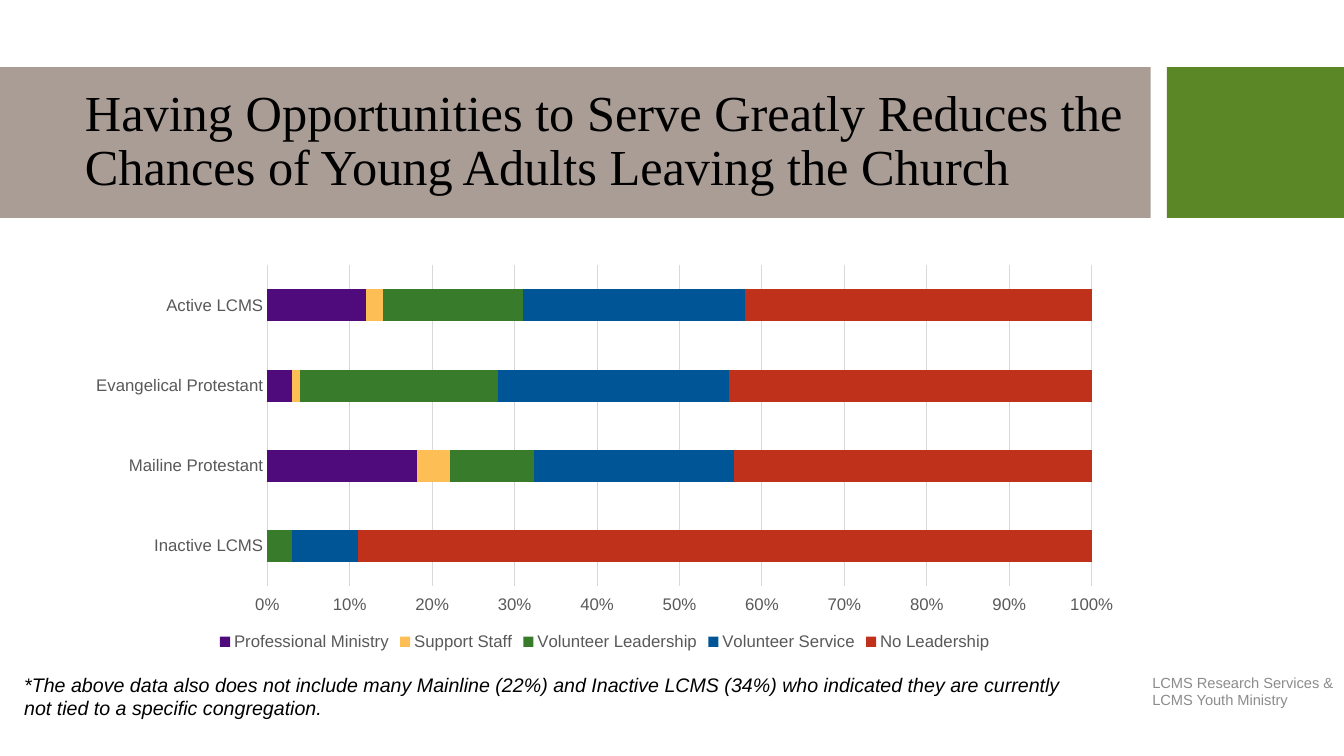
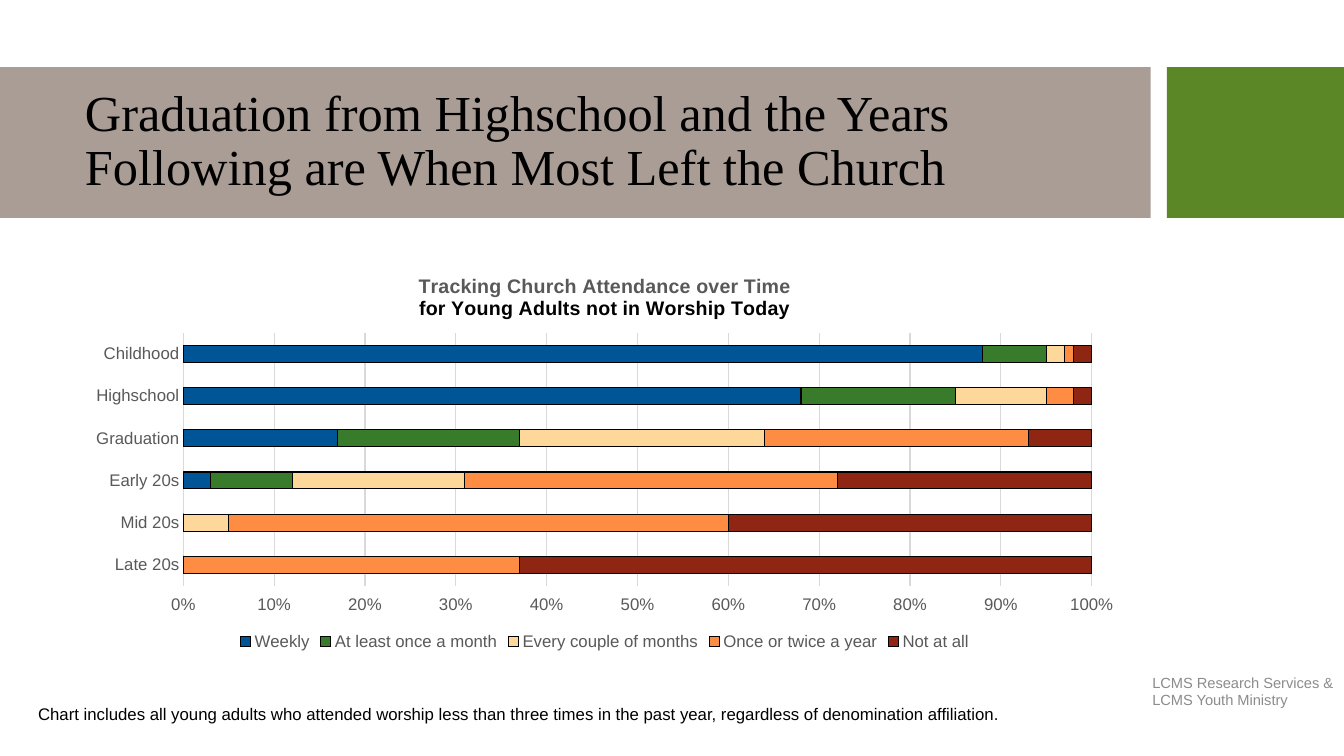
from lxml import etree
from pptx import Presentation
from pptx.chart.data import CategoryChartData
from pptx.dml.color import RGBColor
from pptx.enum import chart as ch, shapes, text
from pptx.oxml import ns
from pptx.util import Cm, Pt

BLACK = RGBColor(0x00, 0x00, 0x00)
TAUPE = RGBColor(0x87, 0x74, 0x6A)
LEAF = RGBColor(0x5C, 0x87, 0x27)
GREY = RGBColor(0x59, 0x59, 0x59)
PALE_GREY = RGBColor(0x8C, 0x8C, 0x8C)
GRID = RGBColor(0xD9, 0xD9, 0xD9)
PURPLE = RGBColor(0x4F, 0x0B, 0x7B)
AMBER = RGBColor(0xFD, 0xBE, 0x56)
GREEN = RGBColor(0x38, 0x7C, 0x2B)
BLUE = RGBColor(0x00, 0x55, 0x96)
RED = RGBColor(0xBF, 0x31, 0x1A)
CREAM = RGBColor(0xFE, 0xD8, 0x9A)
ORANGE = RGBColor(0xFF, 0x8C, 0x43)
MAROON = RGBColor(0x8F, 0x25, 0x13)

SANS, SERIF = "Arial", "Times New Roman"
WIDTH, HEIGHT = 33.87, 19.05
BAND_TOP, BAND_HEIGHT = 1.69, 3.8
TITLE_BOX = (1.89, 2.09, 26.7, 3)
CHART_BOX = (1.89, 6.49, 26.7, 10.01)
CREDIT_BOX = (28.79, 13.12, 5.08, 4.87)


def set_font(font, size, color, name=SANS, bold=False, italic=False):
    font.size, font.name = Pt(size), name
    font.bold, font.italic = bold, italic
    font.color.rgb = color


def add_text(s, box, words, size, color=BLACK, name=SANS, italic=False,
             anchor=text.MSO_ANCHOR.TOP, line_spacing=None):
    tf = s.shapes.add_textbox(*map(Cm, box)).text_frame
    tf.word_wrap = True
    tf.vertical_anchor = anchor
    p = tf.paragraphs[0]
    p.line_spacing = line_spacing
    r = p.add_run()
    r.text = words
    set_font(r.font, size, color, name, italic=italic)


def add_block(s, left, width, color, opacity=100):
    """Place one rectangle of the title band."""
    sp = s.shapes.add_shape(shapes.MSO_SHAPE.RECTANGLE, Cm(left), Cm(BAND_TOP),
                            Cm(width), Cm(BAND_HEIGHT))
    sp.shadow.inherit = False
    sp.fill.solid()
    sp.fill.fore_color.rgb = color
    sp.line.fill.background()
    if opacity < 100:
        clr = sp.fill._xPr.find(".//" + ns.qn("a:srgbClr"))
        etree.SubElement(clr, ns.qn("a:alpha"), val=str(opacity * 1000))


def add_chart_title(chart, lines):
    chart.has_title = True
    chart.chart_title.include_in_layout = False
    tf = chart.chart_title.text_frame
    for i, (words, color) in enumerate(lines):
        p = tf.add_paragraph() if i else tf.paragraphs[0]
        r = p.add_run()
        r.text = words
        set_font(r.font, 14, color, bold=True)


def style_axes(chart, maximum):
    cat, val = chart.category_axis, chart.value_axis
    for axis in (cat, val):
        axis.major_tick_mark = axis.minor_tick_mark = ch.XL_TICK_MARK.NONE
        set_font(axis.tick_labels.font, 12, GREY)
    cat.reverse_order = True
    val.tick_label_position = ch.XL_TICK_LABEL_POSITION.HIGH
    val.format.line.fill.background()
    val.has_major_gridlines = True
    for line in (cat.format.line, val.major_gridlines.format.line):
        line.color.rgb = GRID
        line.width = Pt(0.75)
    val.tick_labels.number_format = "0%"
    val.tick_labels.number_format_is_linked = False
    if maximum is not None:
        val.minimum_scale, val.maximum_scale = 0, maximum
        val.major_unit = maximum / 10


def add_bars(s, box, kind, cats, series, title=(), maximum=None, outline=False):
    """Place a stacked bar chart; series holds (name, color, values)."""
    data = CategoryChartData()
    data.categories = cats
    for name, _, values in series:
        data.add_series(name, values)
    chart = s.shapes.add_chart(kind, *map(Cm, box), data).chart
    set_font(chart.font, 12, BLACK)
    chart.has_title = False
    if title:
        add_chart_title(chart, title)
    chart.has_legend = True
    chart.legend.position = ch.XL_LEGEND_POSITION.BOTTOM
    chart.legend.include_in_layout = False
    set_font(chart.legend.font, 12, GREY)
    style_axes(chart, maximum)
    plot = chart.plots[0]
    plot.gap_width, plot.overlap = 150, 100
    plot.vary_by_categories = False
    for bars, (_, color, _) in zip(plot.series, series):
        bars.invert_if_negative = False
        bars.format.fill.solid()
        bars.format.fill.fore_color.rgb = color
        if outline:
            bars.format.line.color.rgb = BLACK
            bars.format.line.width = Pt(0.75)


def add_base_slide(prs, title):
    """Add a slide with the shared band, title and credit."""
    s = prs.slides.add_slide(prs.slide_layouts[6])
    add_block(s, 0, 29, TAUPE, opacity=70)
    add_block(s, 29.41, WIDTH - 29.41, LEAF)
    add_text(s, TITLE_BOX, title, 36, name=SERIF,
             anchor=text.MSO_ANCHOR.MIDDLE, line_spacing=0.9)
    add_text(s, CREDIT_BOX, "LCMS Research Services & LCMS Youth Ministry",
             10.5, PALE_GREY, anchor=text.MSO_ANCHOR.BOTTOM)
    return s


def add_service_slide(prs):
    s = add_base_slide(prs, "Having Opportunities to Serve Greatly Reduces the "
                            "Chances of Young Adults Leaving the Church")
    add_bars(s, CHART_BOX, ch.XL_CHART_TYPE.BAR_STACKED_100,
             ["Active LCMS", "Evangelical Protestant", "Mailine Protestant",
              "Inactive LCMS"],
             [("Professional Ministry", PURPLE, (12, 3, 18, 0)),
              ("Support Staff", AMBER, (2, 1, 4, 0)),
              ("Volunteer Leadership", GREEN, (17, 24, 10, 3)),
              ("Volunteer Service", BLUE, (27, 28, 24, 8)),
              ("No Leadership", RED, (42, 44, 43, 89))])
    add_text(s, (0.36, 16.83, 27.13, 1.45),
             "*The above data also does not include many Mainline (22%) and "
             "Inactive LCMS (34%) who indicated they are currently not tied to "
             "a specific congregation.", 14, italic=True)


def add_attendance_slide(prs):
    s = add_base_slide(prs, "Graduation from Highschool and the Years "
                            "Following are When Most Left the Church")
    add_bars(s, CHART_BOX, ch.XL_CHART_TYPE.BAR_STACKED,
             ["Childhood", "Highschool", "Graduation", "Early 20s", "Mid 20s",
              "Late 20s"],
             [("Weekly", BLUE, (0.88, 0.68, 0.17, 0.03, 0, 0)),
              ("At least once a month", GREEN, (0.07, 0.17, 0.2, 0.09, 0, 0)),
              ("Every couple of months", CREAM,
               (0.02, 0.1, 0.27, 0.19, 0.05, 0)),
              ("Once or twice a year", ORANGE,
               (0.01, 0.03, 0.29, 0.41, 0.55, 0.37)),
              ("Not at all", MAROON, (0.03, 0.02, 0.08, 0.28, 0.41, 0.63))],
             title=[("Tracking Church Attendance over Time", GREY),
                    ("for Young Adults not in Worship Today", BLACK)],
             maximum=1, outline=True)
    add_text(s, (0.71, 17.6, 25.55, 0.76),
             "Chart includes all young adults who attended worship less than "
             "three times in the past year, regardless of denomination "
             "affiliation.", 12)


def main():
    prs = Presentation()
    prs.slide_width, prs.slide_height = Cm(WIDTH), Cm(HEIGHT)
    add_service_slide(prs)
    add_attendance_slide(prs)
    prs.save("out.pptx")


if __name__ == "__main__":
    main()
